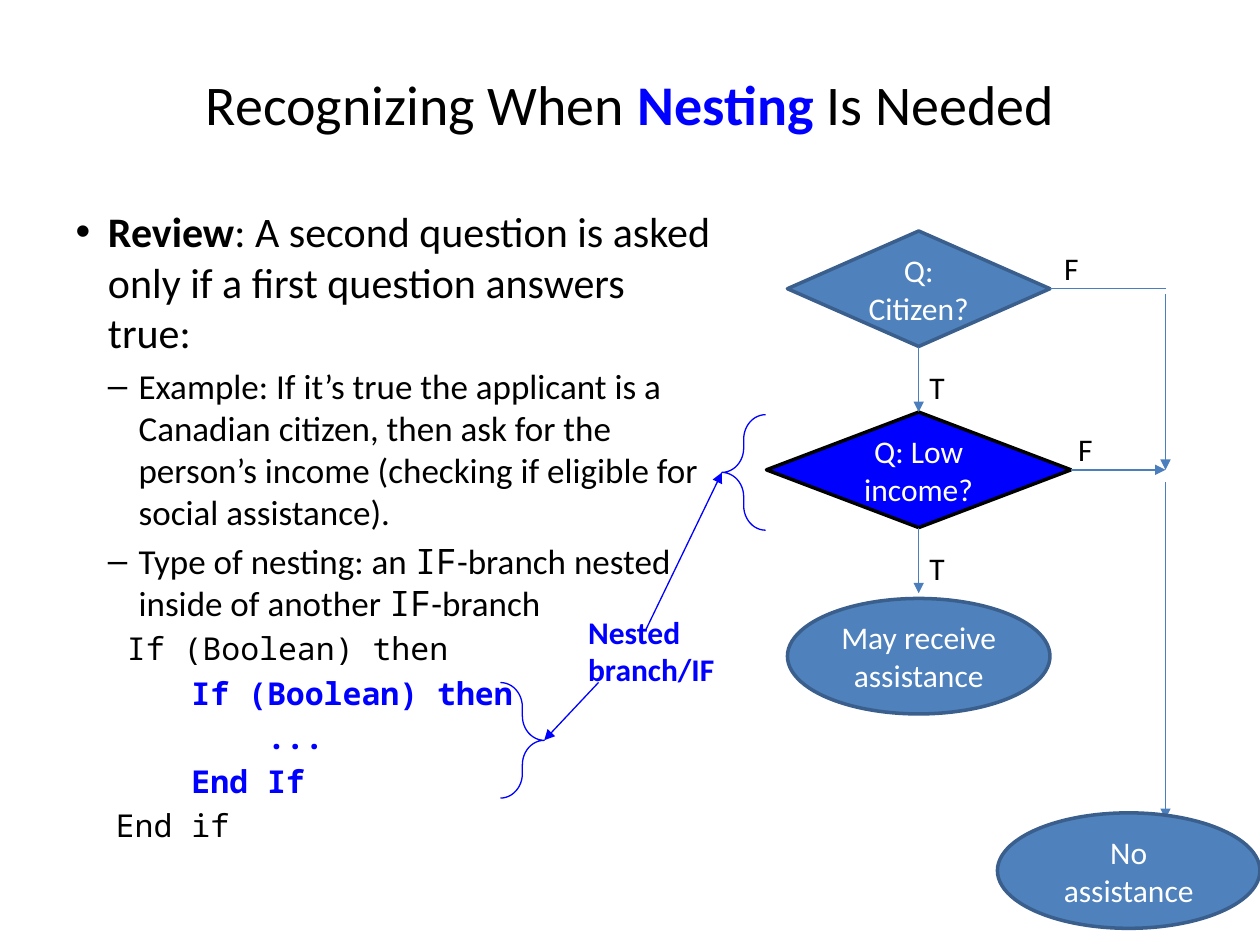
from dataclasses import dataclass

from lxml import etree
from pptx import Presentation
from pptx.dml.color import RGBColor
from pptx.enum.shapes import MSO_CONNECTOR, MSO_SHAPE
from pptx.enum.text import MSO_ANCHOR, MSO_AUTO_SIZE, PP_ALIGN
from pptx.oxml.ns import qn
from pptx.util import Pt

DIAMOND = MSO_SHAPE.DIAMOND
OVAL = MSO_SHAPE.OVAL
BRACE = MSO_SHAPE.LEFT_BRACE
STRAIGHT = MSO_CONNECTOR.STRAIGHT
CENTER = PP_ALIGN.CENTER
MIDDLE = MSO_ANCHOR.MIDDLE
NO_FIT = MSO_AUTO_SIZE.NONE


@dataclass(frozen=True)
class Theme:
    """Colours, fonts and type sizes of the slide."""
    black: str = "000000"
    white: str = "FFFFFF"
    highlight: str = "0000FF"
    node: str = "4F81BD"
    node_edge: str = "3A5F8C"
    flow: str = "4B7EBC"
    font: str = "Calibri"
    mono: str = "Noto Sans Mono"
    title: int = 32
    lead: int = 24
    detail: int = 20
    small: int = 18
    thin: float = 0.75
    thick: float = 2


THEME = Theme()


def color(value):
    """Turn a hex value into a colour."""
    return RGBColor.from_string(value)


def add_text(paragraph, text, size=THEME.small, font=THEME.font,
             fill=THEME.black, bold=False):
    """Append a formatted run to a paragraph."""
    run = paragraph.add_run()
    run.text = text
    run.font.size = Pt(size)
    run.font.name = font
    run.font.bold = bold
    run.font.color.rgb = color(fill)


def place(shape, left, top, width, height):
    """Move and size a placeholder."""
    shape.left, shape.top = Pt(left), Pt(top)
    shape.width, shape.height = Pt(width), Pt(height)


def add_title(slide):
    """Fill the title placeholder."""
    title = slide.shapes.title
    place(title, 36, 21.6, 648, 74.2)
    frame = title.text_frame
    frame.auto_size = NO_FIT
    frame.vertical_anchor = MIDDLE
    paragraph = frame.paragraphs[0]
    paragraph.alignment = CENTER
    add_text(paragraph, "Recognizing When ", size=THEME.title)
    add_text(paragraph, "Nesting", size=THEME.title, fill=THEME.highlight, bold=True)
    add_text(paragraph, " Is Needed", size=THEME.title)


def add_item(frame, level, margin, hanging=0, bullet=None):
    """Return the next body paragraph, indented and bulleted."""
    paragraph = frame.paragraphs[0]
    if paragraph.runs:
        paragraph = frame.add_paragraph()
    else:
        paragraph.space_before = Pt(0)
    paragraph.level = level
    properties = paragraph._p.get_or_add_pPr()
    properties.set("marL", str(Pt(margin)))
    properties.set("indent", str(Pt(-hanging)))
    if bullet:
        etree.SubElement(properties, qn("a:buChar")).set("char", bullet)
    else:
        etree.SubElement(properties, qn("a:buNone"))
    return paragraph


def add_body(slide):
    """Fill the body placeholder with the review points and the code."""
    body = slide.placeholders[1]
    place(body, 36, 114, 377.5, 396)
    frame = body.text_frame
    frame.auto_size = NO_FIT

    review = add_item(frame, 0, 18.5, 18.5, "•")
    add_text(review, "Review", size=THEME.lead, bold=True)
    add_text(review, ": A second question is asked only if a first question "
             "answers true:", size=THEME.lead)

    example = add_item(frame, 1, 36, 17.5, "–")
    add_text(example, "Example: If it’s true the applicant is a Canadian citizen, "
             "then ask for the person’s income (checking if eligible for "
             "social assistance).", size=THEME.detail)

    nesting = add_item(frame, 1, 36, 17.5, "–")
    for text, font in (
        ("Type of nesting: an ", THEME.font),
        ("IF", THEME.mono),
        ("-branch nested inside of another ", THEME.font),
        ("IF", THEME.mono),
        ("-branch", THEME.font),
    ):
        add_text(nesting, text, size=THEME.detail, font=font)

    for text, level, margin, nested in (
        (" If (Boolean) then", 1, 18.5, False),
        ("    If (Boolean) then", 2, 23, True),
        ("        ...", 2, 23, True),
        ("    End If", 2, 23, True),
        ("End if", 2, 23, False),
    ):
        add_text(add_item(frame, level, margin), text, font=THEME.mono, bold=nested,
                 fill=THEME.highlight if nested else THEME.black)


def add_node(slide, kind, text, left, top, width=150,
             fill=THEME.node, edge=THEME.node_edge):
    """Draw a flowchart node with centred text."""
    node = slide.shapes.add_shape(kind, Pt(left), Pt(top), Pt(width), Pt(66))
    node.shadow.inherit = False
    node.fill.solid()
    node.fill.fore_color.rgb = color(fill)
    node.line.color.rgb = color(edge)
    node.line.width = Pt(THEME.thick)
    frame = node.text_frame
    frame.word_wrap = True
    frame.vertical_anchor = MIDDLE
    frame.paragraphs[0].alignment = CENTER
    add_text(frame.paragraphs[0], text, fill=THEME.white)


def add_line(slide, start, end, line=THEME.flow, arrow=True):
    """Draw a straight line, with an arrowhead at its end by default."""
    connector = slide.shapes.add_connector(STRAIGHT, *map(Pt, start + end))
    connector.line.color.rgb = color(line)
    connector.line.width = Pt(THEME.thin)
    if arrow:
        outline = connector.line._get_or_add_ln()
        etree.SubElement(outline, qn("a:tailEnd")).set("type", "triangle")
    etree.SubElement(connector._element.spPr, qn("a:effectLst"))


def add_label(slide, text, left, top, width=48, height=29, **text_format):
    """Add a wrapping text label."""
    box = slide.shapes.add_textbox(Pt(left), Pt(top), Pt(width), Pt(height))
    box.text_frame.word_wrap = True
    add_text(box.text_frame.paragraphs[0], text, **text_format)


def add_brace(slide, left, top, rotation=0):
    """Draw a curly brace around a nested part."""
    brace = slide.shapes.add_shape(BRACE, Pt(left), Pt(top), Pt(25), Pt(66))
    brace.shadow.inherit = False
    brace.rotation = rotation
    brace.adjustments[0] = 0.56
    brace.fill.background()
    brace.line.color.rgb = color(THEME.highlight)
    brace.line.width = Pt(THEME.thin)


def add_flowchart(slide):
    """Draw the questions, outcomes and branches."""
    add_node(slide, DIAMOND, "Q: Citizen?", 450, 132)
    add_node(slide, DIAMOND, "Q: Low income?", 438, 235.5, width=174,
             fill=THEME.highlight, edge=THEME.black)
    add_node(slide, OVAL, "May receive assistance", 450, 342)
    for top, bottom in ((198, 235.5), (301.5, 339)):
        add_line(slide, (525, top), (525, bottom))
        add_label(slide, "T", 524, top + 8.5)

    add_line(slide, (600, 165), (666, 165), arrow=False)
    add_line(slide, (666, 168), (666, 268.5))
    add_line(slide, (612, 268.5), (666, 268.5))
    add_line(slide, (666, 275.5), (666, 468))
    add_label(slide, "F", 601, 139)
    add_label(slide, "F", 609, 242)
    add_node(slide, OVAL, "No assistance", 570, 464.5)


def add_nesting_note(slide):
    """Link the nested code and the nested question to one label."""
    add_brace(slide, 286, 390, rotation=180)
    add_brace(slide, 412.5, 237)
    add_line(slide, (342, 390), (311, 423), line=THEME.highlight)
    add_line(slide, (369, 360), (412.5, 270), line=THEME.highlight)
    add_label(slide, "Nested branch/IF", 329, 346.5, 135, 51,
              fill=THEME.highlight, bold=True)


def main():
    """Build and save the slide."""
    presentation = Presentation()
    presentation.slide_width, presentation.slide_height = Pt(720), Pt(540)
    slide = presentation.slides.add_slide(presentation.slide_layouts[1])
    add_title(slide)
    add_body(slide)
    add_flowchart(slide)
    add_nesting_note(slide)
    presentation.save("out.pptx")


if __name__ == "__main__":
    main()
